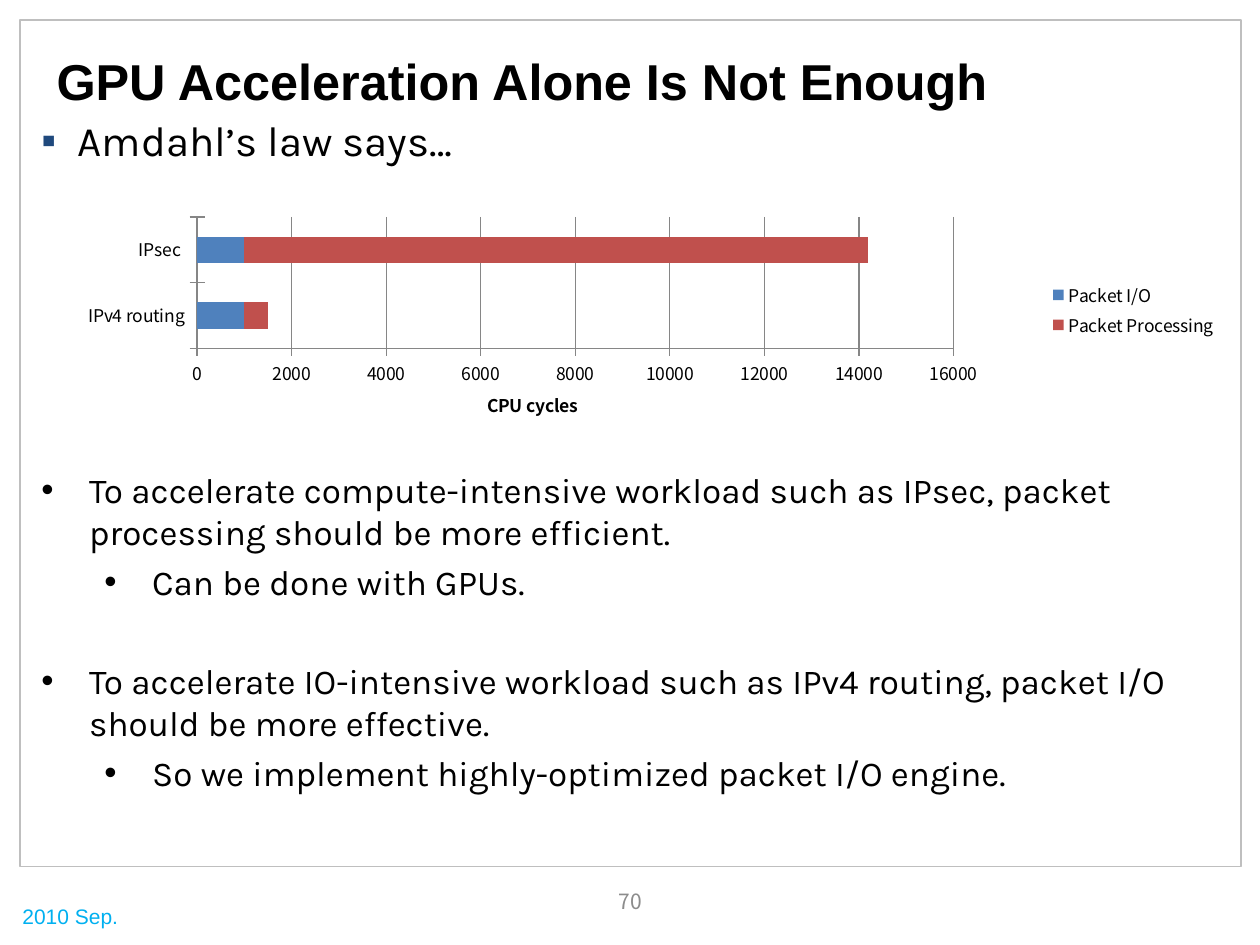
import pptx
import pptx.chart.data
import pptx.dml.color
import pptx.enum.chart
import pptx.enum.shapes
import pptx.enum.text
import pptx.oxml
import pptx.oxml.ns
import pptx.util

Inches = pptx.util.Inches
Pt = pptx.util.Pt
RGB = pptx.dml.color.RGBColor
Align = pptx.enum.text.PP_ALIGN
Anchor = pptx.enum.text.MSO_ANCHOR
Enum = pptx.enum.chart

BLACK = RGB(0x00, 0x00, 0x00)
FRAME = RGB(0xBF, 0xBF, 0xBF)
CYAN = RGB(0x00, 0xB0, 0xF0)
GRAY = RGB(0x8C, 0x8C, 0x8C)
GRID = RGB(0x86, 0x86, 0x86)
NAVY = RGB(0x1F, 0x49, 0x7D)
BLUE = RGB(0x4F, 0x81, 0xBD)
RED = RGB(0xC0, 0x50, 0x4D)

SANS = "Arial"
BODY = "Karla"
CJK = "Noto Sans CJK KR"

LEFT = 0.23
WIDTH = 9.53
POINTS = [
    ("To accelerate compute-intensive workload such as IPsec, "
     "packet processing should be more efficient.", 0, 0),
    ("Can be done with GPUs.", 1, 4.5),
    ("To accelerate IO-intensive workload such as IPv4 routing, "
     "packet I/O should be more effective.", 0, 32.5),
    ("So we implement highly-optimized packet I/O engine.", 1, 4.5),
]


def add_box(slide, left, top, width, height, anchor=Anchor.TOP, wrap=True):
    box = slide.shapes.add_textbox(
        Inches(left), Inches(top), Inches(width), Inches(height))
    frame = box.text_frame
    frame.word_wrap = wrap
    frame.vertical_anchor = anchor
    return frame


def add_run(para, text, face, size, color, bold=False):
    run = para.add_run()
    run.text = text
    run.font.name = face
    run.font.size = Pt(size)
    run.font.bold = bold
    run.font.color.rgb = color


def set_bullet(para, mark, margin, indent, color):
    props = para._p.get_or_add_pPr()
    props.set("marL", str(Inches(margin)))
    props.set("indent", str(Inches(-indent)))
    space = pptx.oxml.ns.nsdecls("a")
    for xml in (
        f'<a:buClr {space}><a:srgbClr val="{color}"/></a:buClr>',
        f'<a:buFont {space} typeface="{SANS}"/>',
        f'<a:buChar {space} char="{mark}"/>',
    ):
        props.append(pptx.oxml.parse_xml(xml))


def add_frame(slide):
    shape = slide.shapes.add_shape(
        pptx.enum.shapes.MSO_SHAPE.RECTANGLE,
        Inches(0.16), Inches(0.16), Inches(9.69), Inches(6.72))
    shape.shadow.inherit = False
    shape.fill.background()
    shape.line.color.rgb = FRAME
    shape.line.width = Pt(0.75)


def add_points(slide):
    frame = add_box(slide, LEFT, 3.67, WIDTH, 2.81)
    for index, (text, level, gap) in enumerate(POINTS):
        para = frame.add_paragraph() if index else frame.paragraphs[0]
        para.level = level
        set_bullet(para, "•", 0.38 + 0.5 * level, 0.38, BLACK)
        if gap:
            para.space_before = Pt(gap)
        add_run(para, text, BODY, 20, BLACK)


def set_plot(chart, left, top, width, height):
    space = pptx.oxml.ns.nsdecls("c")
    parts = {"x": left, "y": top, "w": width, "h": height}
    sizes = "".join(f'<c:{key} val="{val}"/>' for key, val in parts.items())
    layout = pptx.oxml.parse_xml(
        f'<c:layout {space}><c:manualLayout><c:layoutTarget val="inner"/>'
        f'<c:xMode val="edge"/><c:yMode val="edge"/>{sizes}'
        '</c:manualLayout></c:layout>')
    area = chart._chartSpace.chart.plotArea
    for old in area.findall(pptx.oxml.ns.qn("c:layout")):
        area.remove(old)
    area.insert(0, layout)


def style_axis(axis):
    axis.major_tick_mark = Enum.XL_TICK_MARK.CROSS
    axis.minor_tick_mark = Enum.XL_TICK_MARK.NONE
    axis.format.line.color.rgb = GRID
    axis.format.line.width = Pt(0.75)


def add_graph(slide):
    data = pptx.chart.data.CategoryChartData()
    data.categories = ["IPv4 routing", "IPsec "]
    data.add_series("Packet I/O", (1000, 1000))
    data.add_series("Packet Processing", (500, 13200))
    chart = slide.shapes.add_chart(
        Enum.XL_CHART_TYPE.BAR_STACKED, Inches(LEFT), Inches(1.56),
        Inches(WIDTH), Inches(1.8), data).chart
    chart.font.name = CJK
    chart.font.size = Pt(10)
    chart.font.color.rgb = BLACK
    chart.has_title = False
    chart.has_legend = True
    chart.legend.position = Enum.XL_LEGEND_POSITION.RIGHT
    chart.legend.include_in_layout = False
    set_plot(chart, 0.14, 0.09, 0.63, 0.58)

    plot = chart.plots[0]
    plot.vary_by_categories = False
    plot.overlap = 100
    plot.gap_width = 150
    for series, color in zip(plot.series, (BLUE, RED)):
        series.format.fill.solid()
        series.format.fill.fore_color.rgb = color

    style_axis(chart.category_axis)
    axis = chart.value_axis
    style_axis(axis)
    axis.minimum_scale = 0
    axis.maximum_scale = 16000
    axis.major_unit = 2000
    axis.has_major_gridlines = True
    axis.major_gridlines.format.line.color.rgb = GRID
    axis.major_gridlines.format.line.width = Pt(0.75)
    para = axis.axis_title.text_frame.paragraphs[0]
    add_run(para, "CPU cycles", CJK, 10, BLACK, True)


def main():
    deck = pptx.Presentation()
    deck.slide_width = Inches(10)
    deck.slide_height = Inches(7.5)
    slide = deck.slides.add_slide(deck.slide_layouts[6])
    add_frame(slide)

    date = add_box(slide, 0.08, 7.12, 0.97, 0.3, wrap=False)
    add_run(date.paragraphs[0], "2010 Sep.", SANS, 12, CYAN)

    title = add_box(slide, 0.35, 0.36, 9.29, 0.55, Anchor.MIDDLE)
    add_run(title.paragraphs[0], "GPU Acceleration Alone Is Not Enough",
            SANS, 28.8, BLACK, True)

    number = add_box(slide, 3.84, 6.95, 2.33, 0.4, Anchor.MIDDLE)
    number.paragraphs[0].alignment = Align.CENTER
    add_run(number.paragraphs[0], "70", CJK, 12, GRAY)

    lead = add_box(slide, LEFT, 0.86, WIDTH, 0.47).paragraphs[0]
    set_bullet(lead, "▪", 0.29, 0.29, NAVY)
    add_run(lead, "Amdahl’s law says…", BODY, 24, BLACK)

    add_graph(slide)
    add_points(slide)
    deck.save("out.pptx")


if __name__ == "__main__":
    main()
